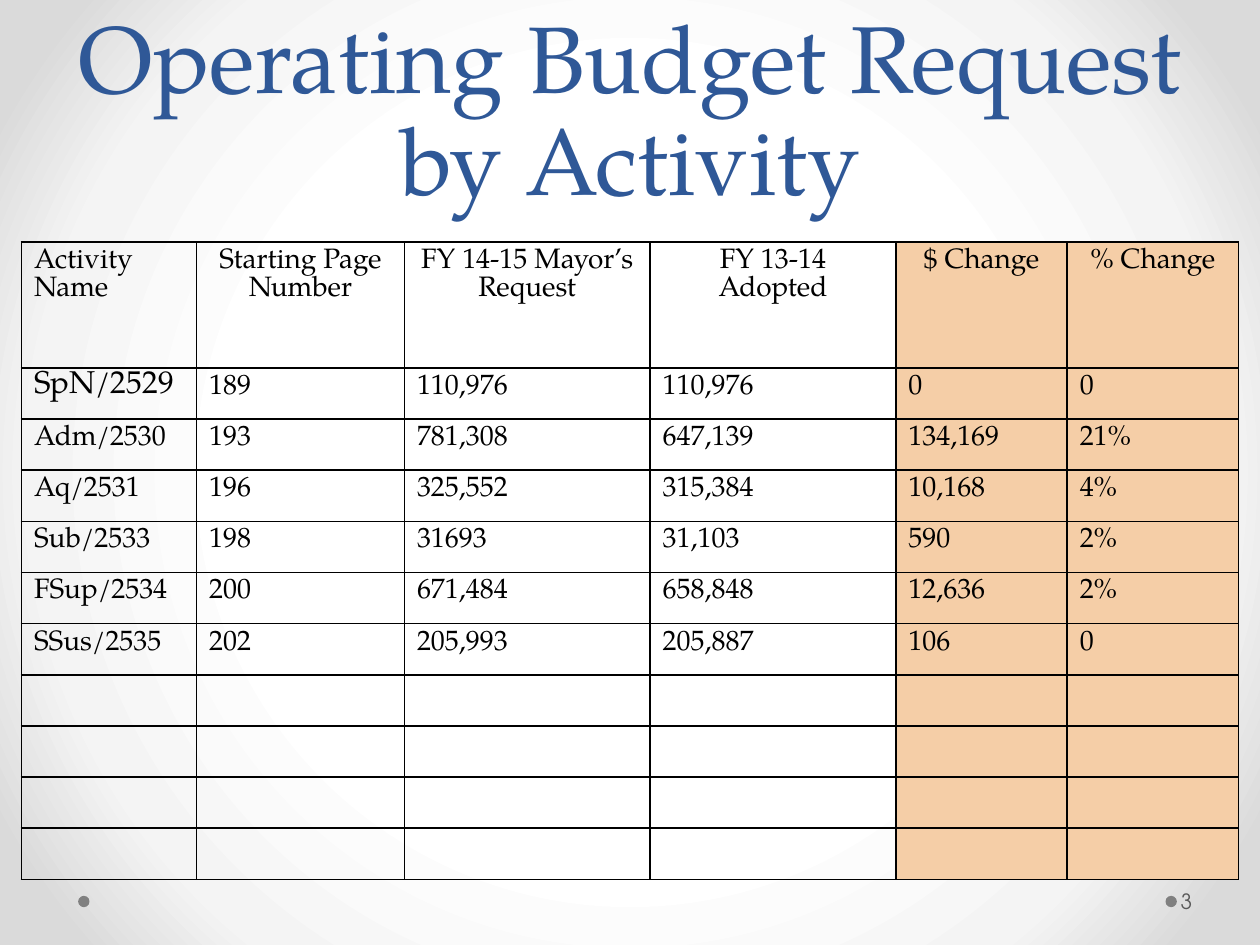
from dataclasses import dataclass
from typing import Optional

from lxml import etree
from pptx import Presentation
from pptx import util as u
from pptx.dml.color import RGBColor
from pptx.enum import shapes, text
from pptx.oxml import parse_xml
from pptx.oxml.ns import nsdecls, qn

SERIF = "TeX Gyre Pagella"
SANS = "TeX Gyre Adventor"
BLACK = "000000"
PEACH = "F5CEA7"
COLUMN_WIDTHS = [1.39, 1.65, 1.95, 1.95, 1.36, 1.36]
HEADER_HEIGHT, ROW_HEIGHT = 1.0, 0.406
FIRST_CHANGE_COLUMN = 4
EMPTY_ROWS = 4
HEADERS = ["Activity Name", "Starting Page Number", "FY 14-15 Mayor’s Request",
           "FY 13-14 Adopted", "$ Change", "% Change"]


@dataclass
class Activity:
    name: str
    page: str
    request: str
    adopted: str
    change: str
    percent: str
    name_size: float = 16

    def values(self) -> list[str]:
        return [self.name, self.page, self.request, self.adopted, self.change, self.percent]


@dataclass
class TextStyle:
    size: float
    font: str = SERIF
    color: str = BLACK
    align: text.PP_ALIGN = text.PP_ALIGN.LEFT
    line_spacing: Optional[float] = None


ACTIVITIES = [
    Activity("SpN/2529", "189", "110,976", "110,976", "0", "0", name_size=18),
    Activity("Adm/2530", "193", "781,308", "647,139", "134,169", "21%"),
    Activity("Aq/2531", "196", "325,552", "315,384", "10,168", "4%"),
    Activity("Sub/2533", "198", "31693", "31,103", "590", "2%"),
    Activity("FSup/2534", "200", "671,484", "658,848", "12,636", "2%"),
    Activity("SSus/2535", "202", "205,993", "205,887", "106", "0"),
]


def rgb(color: str) -> RGBColor:
    return RGBColor.from_string(color)


def write(text_frame, words: str, style: TextStyle) -> None:
    text_frame.text = words
    paragraph = text_frame.paragraphs[0]
    paragraph.alignment = style.align
    if style.line_spacing:
        paragraph.line_spacing = u.Pt(style.line_spacing)
    for run in paragraph.runs:
        run.font.name = style.font
        run.font.size = u.Pt(style.size)
        run.font.color.rgb = rgb(style.color)


def add_text(slide, box: tuple, words: str, style: TextStyle, anchor, left_inset=0.1) -> None:
    shape = slide.shapes.add_textbox(*map(u.Inches, box))
    shape.text_frame.word_wrap = True
    shape.text_frame.vertical_anchor = anchor
    shape.text_frame.margin_left = u.Inches(left_inset)
    write(shape.text_frame, words, style)


def add_dot(slide, left: float) -> None:
    dot = slide.shapes.add_shape(shapes.MSO_SHAPE.OVAL, u.Inches(left), u.Inches(7.11),
                                 u.Inches(0.09), u.Inches(0.09))
    dot.shadow.inherit = False
    dot.fill.solid()
    dot.fill.fore_color.rgb = rgb("808080")
    dot.line.fill.background()


def set_background(slide) -> None:
    """Radial gradient, white in the middle and grey at the corners."""
    stops = "".join(f'<a:gs pos="{position}000"><a:srgbClr val="{color}"/></a:gs>'
                    for position, color in [(50, "FFFFFF"), (76, "F4F4F4"), (92, "DADADA")])
    background = parse_xml(
        f'<p:bg {nsdecls("p", "a")}><p:bgPr><a:gradFill rotWithShape="1"><a:gsLst>{stops}</a:gsLst>'
        '<a:path path="circle"><a:fillToRect l="50000" t="50000" r="50000" b="50000"/></a:path>'
        '</a:gradFill><a:effectLst/></p:bgPr></p:bg>')
    slide.shapes._spTree.getparent().insert(0, background)


def set_borders(cell) -> None:
    """Black one-point lines; they must come before the fill in the cell properties."""
    properties = cell._tc.get_or_add_tcPr()
    for index, side in enumerate(["lnL", "lnR", "lnT", "lnB"]):
        line = etree.Element(qn(f"a:{side}"), w=str(u.Pt(1)))
        fill = etree.SubElement(line, qn("a:solidFill"))
        etree.SubElement(fill, qn("a:srgbClr"), val=BLACK)
        properties.insert(index, line)


def add_budget_table(slide) -> None:
    rows = [HEADERS] + [activity.values() for activity in ACTIVITIES]
    rows += [[""] * len(HEADERS)] * EMPTY_ROWS
    height = HEADER_HEIGHT + ROW_HEIGHT * (len(rows) - 1)
    table = slide.shapes.add_table(len(rows), len(HEADERS), u.Inches(0.17), u.Inches(1.92),
                                   u.Inches(sum(COLUMN_WIDTHS)), u.Inches(height)).table
    table.first_row = table.horz_banding = False
    for column, width in zip(table.columns, COLUMN_WIDTHS):
        column.width = u.Inches(width)
    for row_index, values in enumerate(rows):
        table.rows[row_index].height = u.Inches(ROW_HEIGHT if row_index else HEADER_HEIGHT)
        for column_index, value in enumerate(values):
            cell = table.cell(row_index, column_index)
            style = TextStyle(16, line_spacing=16)
            if row_index == 0 and column_index:
                style.align = text.PP_ALIGN.CENTER
            if column_index == 0 and 1 <= row_index <= len(ACTIVITIES):
                style.size = ACTIVITIES[row_index - 1].name_size
            write(cell.text_frame, value, style)
            if column_index >= FIRST_CHANGE_COLUMN:
                cell.fill.solid()
                cell.fill.fore_color.rgb = rgb(PEACH)
            else:
                cell.fill.background()
            set_borders(cell)


def main() -> None:
    presentation = Presentation()
    presentation.slide_width, presentation.slide_height = u.Inches(10), u.Inches(7.5)
    slide = presentation.slides.add_slide(presentation.slide_layouts[6])
    set_background(slide)
    for left in (9.25, 0.62):
        add_dot(slide, left)
    add_text(slide, (0.5, 0, 9, 1.75), "Operating Budget Request by Activity",
             TextStyle(54, color="2F5897", align=text.PP_ALIGN.CENTER, line_spacing=58),
             text.MSO_ANCHOR.BOTTOM)
    add_budget_table(slide)
    add_text(slide, (9.34, 6.95, 0.61, 0.4), "3", TextStyle(12, SANS, "595959"),
             text.MSO_ANCHOR.MIDDLE, left_inset=0.03)
    presentation.save("out.pptx")


if __name__ == "__main__":
    main()
